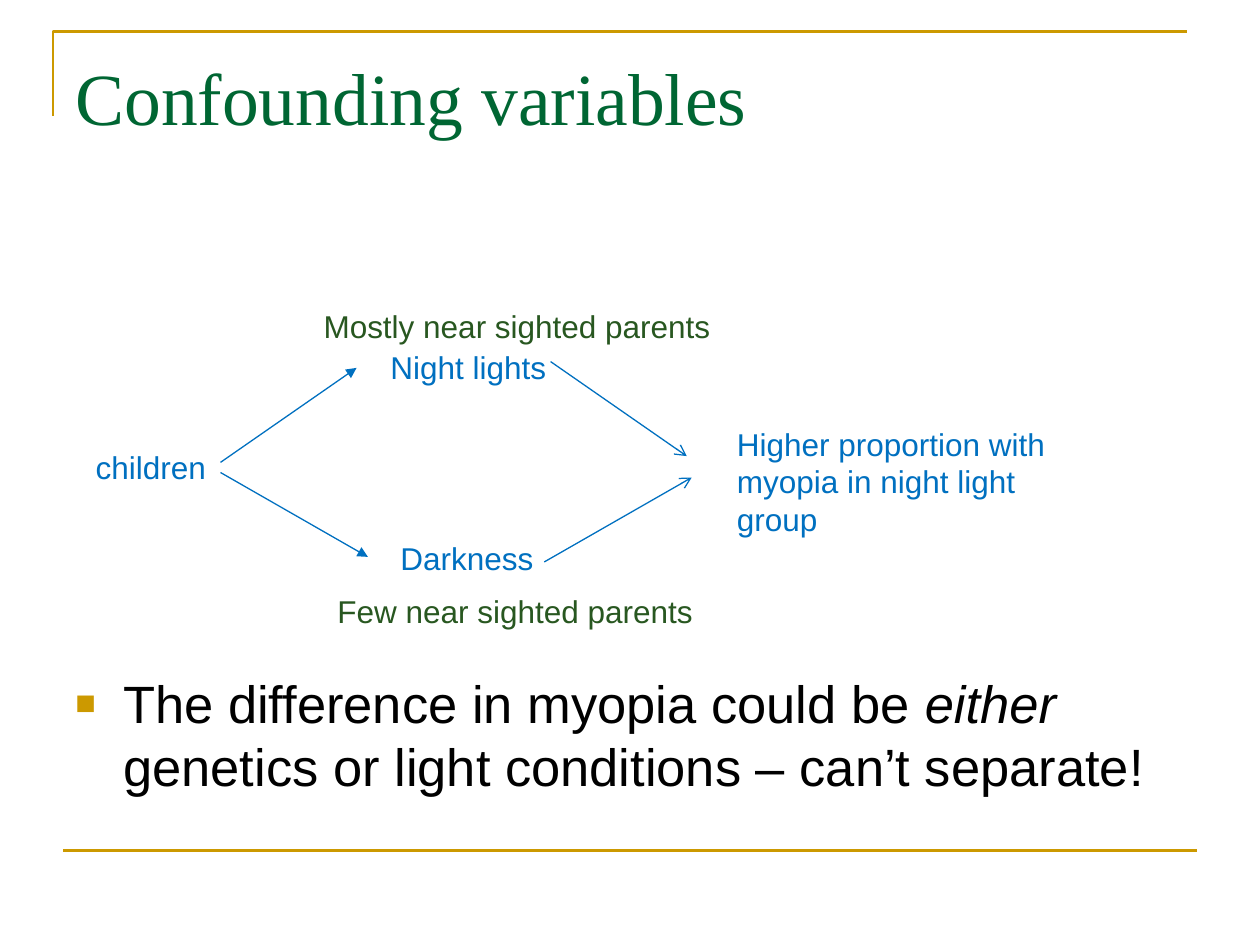
"""Build the slide on confounding variables in a myopia study."""
import pptx
import pptx.dml.color
import pptx.enum.shapes
import pptx.enum.text
import pptx.oxml.ns
import pptx.util
from lxml import etree

Inches = pptx.util.Inches
Pt = pptx.util.Pt
qn = pptx.oxml.ns.qn

THEME = {
    "gold": "CC9900", "title": "006633", "flow": "0070C0", "parents": "285720", "text": "000000",
    "title_size": 42, "body_size": 30, "label_size": 18,
    "title_font": "Times New Roman", "body_font": "Arial",
}


def add_text(box, text, color="flow", size="label_size", font="body_font", wrap=True, top=0.05, italic=""):
    s = slide.shapes.add_textbox(*map(Inches, box))
    tf = s.text_frame
    tf.word_wrap = wrap
    tf.margin_top = Inches(top)
    p = tf.paragraphs[0]
    before, found, after = text.partition(italic) if italic else (text, "", "")
    for part in filter(None, (before, found, after)):
        r = p.add_run()
        r.text = part
        r.font.name = THEME[font]
        r.font.size = Pt(THEME[size])
        r.font.italic = part == italic
        r.font.color.rgb = pptx.dml.color.RGBColor.from_string(THEME[color])
    return p


def add_line(start, end, color="flow", width=0.75, arrow=None):
    s = slide.shapes.add_connector(
        pptx.enum.shapes.MSO_CONNECTOR.STRAIGHT, *map(Inches, (*start, *end)))
    s.line.color.rgb = pptx.dml.color.RGBColor.from_string(THEME[color])
    s.line.width = Pt(width)
    if arrow:
        etree.SubElement(s.line._get_or_add_ln(), qn("a:tailEnd"), type=arrow)
    etree.SubElement(s._element.spPr, qn("a:effectLst"))


prs = pptx.Presentation()
prs.slide_width, prs.slide_height = Inches(10), Inches(7.5)
slide = prs.slides.add_slide(prs.slide_layouts[6])

builder = slide.shapes.build_freeform(Inches(0.42), Inches(0.92))
builder.add_line_segments([(Inches(0.42), Inches(0.25)), (Inches(9.42), Inches(0.25))], close=False)
frame = builder.convert_to_shape()
frame.shadow.inherit = False
frame.fill.background()
frame.line.color.rgb = pptx.dml.color.RGBColor.from_string(THEME["gold"])
frame.line.width = Pt(1.5)
add_line((0.5, 6.75), (9.5, 6.75), "gold", 1.5)

add_text((0.5, 0.3, 9, 1.25), "Confounding variables", "title", "title_size", "title_font", top=0.11)

p = add_text((0.5, 5.28, 9, 1.42),
             "The difference in myopia could be either genetics or light conditions – can’t separate!",
             "text", "body_size", italic="either")
pPr = p._p.get_or_add_pPr()
pPr.set("marL", str(Inches(0.38)))
pPr.set("indent", str(-Inches(0.38)))
bullet_color = etree.SubElement(pPr, qn("a:buClr"))
etree.SubElement(bullet_color, qn("a:srgbClr"), val=THEME["gold"])
etree.SubElement(pPr, qn("a:buSzPct"), val="65000")
etree.SubElement(pPr, qn("a:buFont"), typeface=THEME["body_font"])
etree.SubElement(pPr, qn("a:buChar"), char="■")

for start, end, arrow in [
    ((1.75, 3.67), (2.83, 2.92), "triangle"),
    ((1.75, 3.75), (2.92, 4.42), "triangle"),
    ((4.37, 2.87), (5.45, 3.62), "arrow"),
    ((4.32, 4.46), (5.49, 3.79), "arrow"),
]:
    add_line(start, end, arrow=arrow)

for box, text, color, wrap in [
    ((0.66, 3.51, 1.09, 0.4), "children", "flow", False),
    ((3, 2.71, 1.45, 0.4), "Night lights", "flow", False),
    ((3.08, 4.23, 1.27, 0.4), "Darkness", "flow", False),
    ((5.75, 3.32, 2.75, 1.01), "Higher proportion with myopia in night light group", "flow", True),
    ((2.47, 2.39, 3.3, 0.4), "Mostly near sighted parents", "parents", False),
    ((2.58, 4.65, 5, 0.4), "Few near sighted parents", "parents", True),
]:
    add_text(box, text, color, wrap=wrap)

prs.save("out.pptx")
